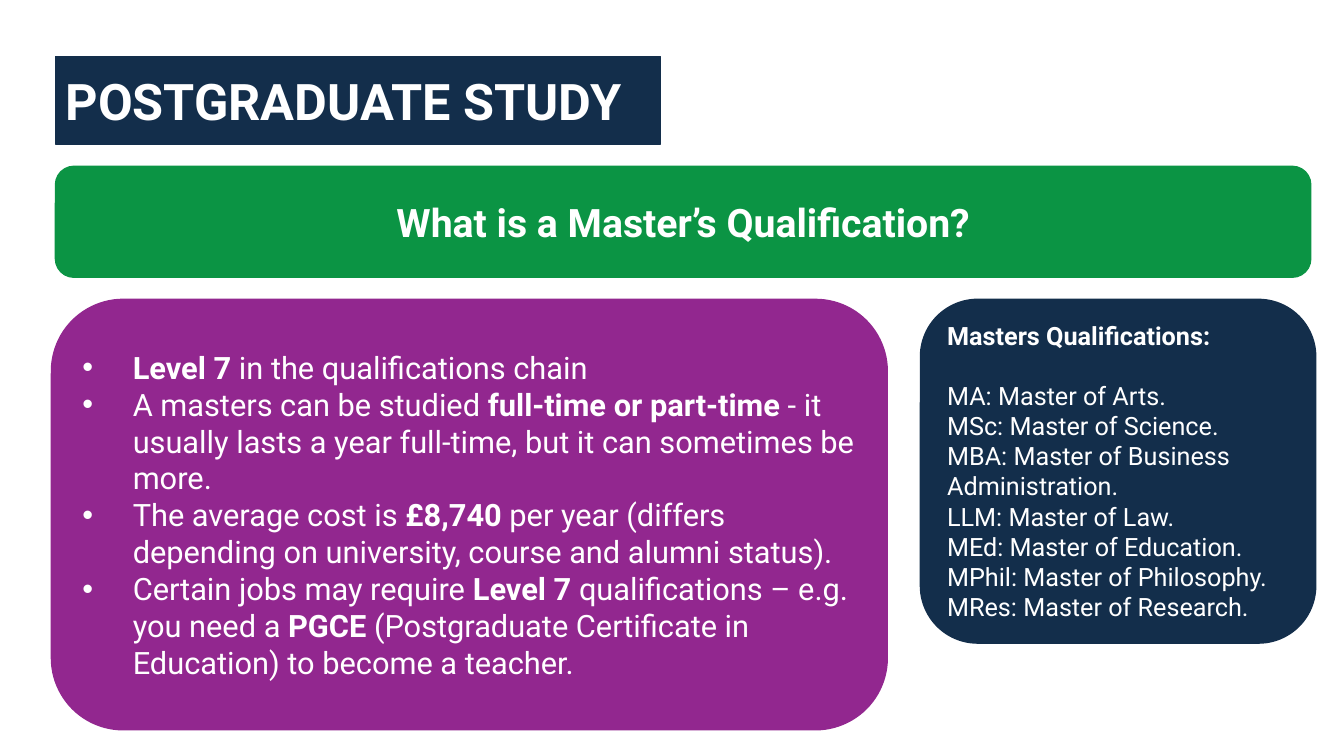
from dataclasses import dataclass

from lxml.etree import SubElement
from pptx import Presentation
from pptx.dml.color import RGBColor
from pptx.enum.shapes import MSO_SHAPE
from pptx.enum.text import MSO_ANCHOR, MSO_AUTO_SIZE, PP_ALIGN
from pptx.oxml.ns import qn
from pptx.util import Inches, Pt


@dataclass(frozen=True)
class Theme:
    font: str = "Roboto"
    navy: str = "132E4B"
    green: str = "0B9444"
    purple: str = "92278F"
    white: str = "FFFFFF"
    title: int = 36
    banner: int = 28
    body: int = 22
    side: int = 18


class SlideBuilder:
    """Places elements by percentages of the slide's width and height."""

    def __init__(self, deck, theme):
        self.deck, self.theme = deck, theme
        self.page = deck.slides.add_slide(deck.slide_layouts[1])

    def area(self, left, top, width, height):
        across, down = self.deck.slide_width, self.deck.slide_height
        shares = (left, across), (top, down), (width, across), (height, down)
        return [int(share * side / 100) for share, side in shares]

    def paint(self, shape, color):
        shape.fill.solid()
        shape.fill.fore_color.rgb = RGBColor.from_string(color)
        shape.line.color.rgb = RGBColor.from_string(color)
        shape.line.width = Pt(1)

    def place(self, shape, area):
        shape.left, shape.top, shape.width, shape.height = area

    def add_text(self, shape, lines, size, align=PP_ALIGN.LEFT, bullets=False):
        """Fill a shape with lines; text between ** marks is bold."""
        frame = shape.text_frame
        frame.word_wrap = True
        frame.auto_size = MSO_AUTO_SIZE.NONE
        frame.vertical_anchor = MSO_ANCHOR.MIDDLE
        for number, line in enumerate(lines):
            para = frame.add_paragraph() if number else frame.paragraphs[0]
            para.alignment = align
            para.space_before = Pt(0)
            if bullets:
                self.bullet(para)
            for index, part in enumerate(line.split("**")):
                if part:
                    span = para.add_run()
                    span.text = part
                    span.font.name = self.theme.font
                    span.font.size = Pt(size)
                    span.font.bold = index % 2 == 1
                    span.font.color.rgb = RGBColor.from_string(self.theme.white)

    def bullet(self, para):
        properties = para._p.get_or_add_pPr()
        properties.set("marL", str(Inches(0.5)))
        properties.set("indent", str(-Inches(0.5)))
        SubElement(properties, qn("a:buFont"), typeface="Arial")
        SubElement(properties, qn("a:buChar"), char="•")

    def title(self, text, area, color):
        box = self.page.shapes.title
        self.place(box, area)
        self.paint(box, color)
        self.add_text(box, [f"**{text}**"], self.theme.title)

    def panel(self, area, color):
        box = self.page.shapes.add_shape(MSO_SHAPE.ROUNDED_RECTANGLE, *area)
        box.shadow.inherit = False
        self.paint(box, color)
        return box

    def bullet_panel(self, lines, area, color):
        panel = self.panel(area, color)
        body = self.page.placeholders[1]
        # Keep the list clear of the rounded corners and in front of the panel
        inset = int(panel.height * panel.adjustments[0] * 0.29)
        left, top, width, height = area
        self.place(body, (left + inset, top + inset,
                          width - 2 * inset, height - 2 * inset))
        body._element.addprevious(panel._element)
        self.add_text(body, lines, self.theme.body, bullets=True)


def main():
    deck = Presentation()
    deck.slide_width, deck.slide_height = Inches(13.33), Inches(7.5)
    theme = Theme()
    slide = SlideBuilder(deck, theme)
    margin, panel_top = 4.13, 39.6

    # Title and question banner
    slide.title("POSTGRADUATE STUDY", slide.area(margin, 7.47, 45, 11.6), theme.navy)
    banner = slide.panel(slide.area(margin, 22, 93.4, 14.67), theme.green)
    slide.add_text(banner, ["**What is a Master’s Qualification?**"],
                   theme.banner, PP_ALIGN.CENTER)

    # Key facts
    slide.bullet_panel([
        "**Level 7 **in the qualifications chain",
        "A masters can be studied **full-time or part-time **- it usually lasts "
        "a year full-time, but it can sometimes be more.",
        "The average cost is **£8,740 **per year (differs depending on "
        "university, course and alumni status).",
        "Certain jobs may require **Level 7** qualifications – e.g. you need a "
        "**PGCE **(Postgraduate Certificate in Education) to become a teacher.",
    ], slide.area(3.83, panel_top, 62.19, 56.93), theme.purple)

    # Types of master's degree
    degrees = {
        "MA": "Arts", "MSc": "Science", "MBA": "Business Administration",
        "LLM": "Law", "MEd": "Education", "MPhil": "Philosophy", "MRes": "Research",
    }
    side = slide.panel(slide.area(68.49, panel_top, 29.41, 45.47), theme.navy)
    slide.add_text(side, ["**Masters Qualifications:**"] + [
        f"{short}: Master of {subject}." for short, subject in degrees.items()
    ], theme.side)
    side.text_frame.paragraphs[0].space_after = Pt(21)

    deck.save("out.pptx")


if __name__ == "__main__":
    main()
